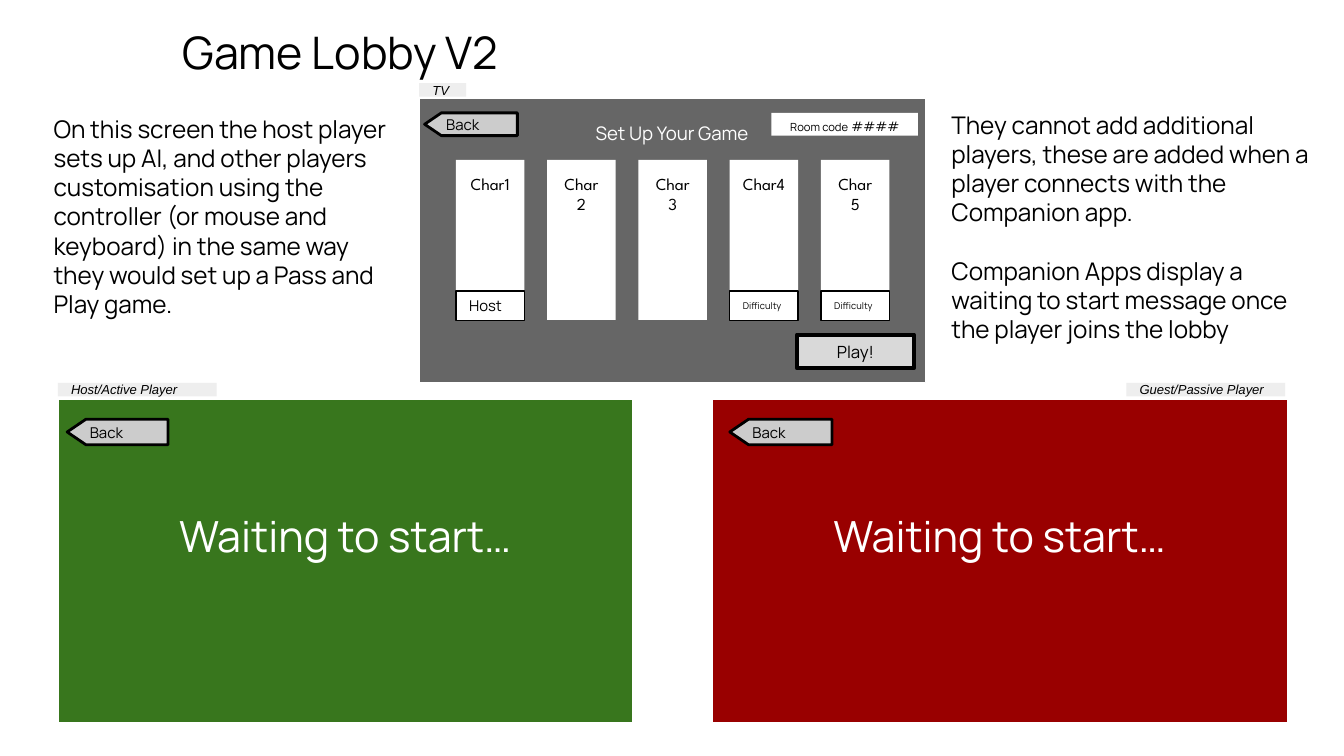
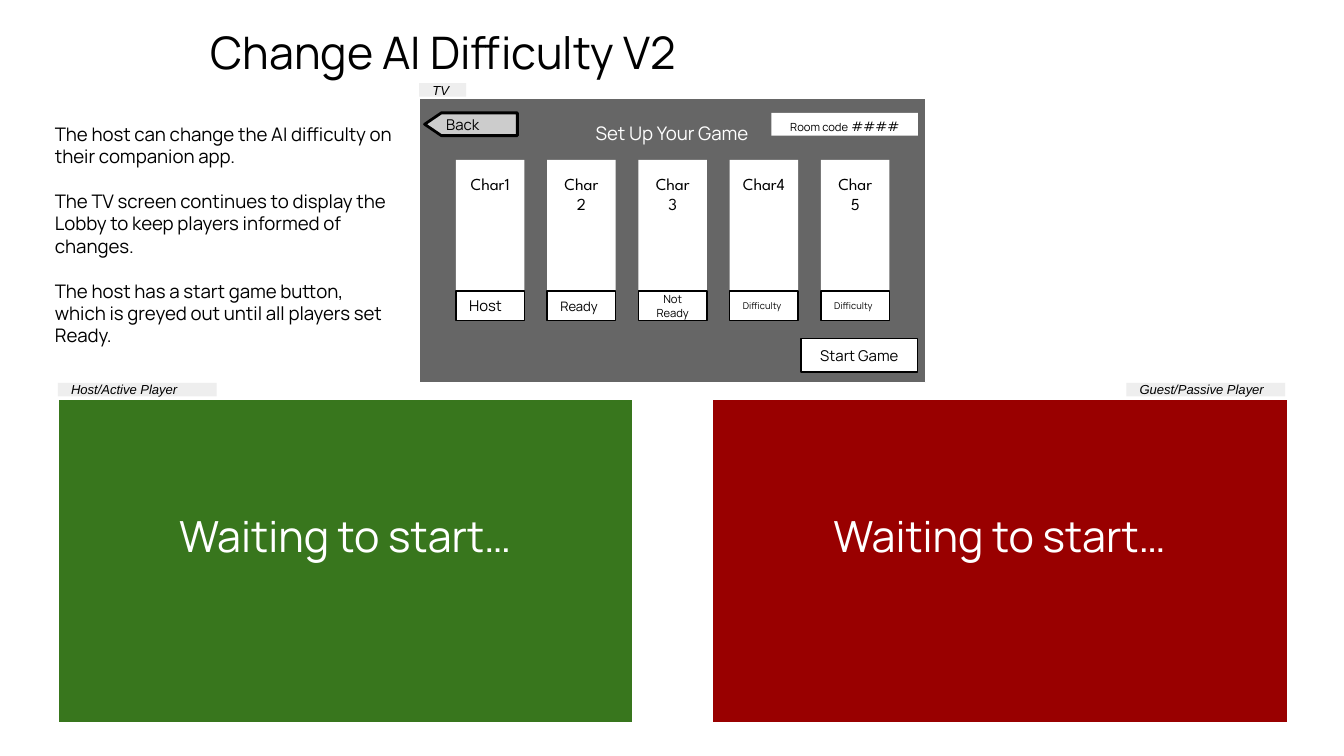
from pptx import Presentation
from pptx.dml.color import RGBColor
from pptx.enum.shapes import MSO_SHAPE as Preset
from pptx.enum.text import MSO_ANCHOR as Anchor, PP_ALIGN as Align
from pptx.util import Pt

BLACK, WHITE, GREEN, RED = "000000", "FFFFFF", "38761D", "990000"
SCREEN, TAG, ARROW, BUTTON = "666666", "EEEEEE", "CCCCCC", "D9D9D9"
FONT = "Manrope"


def color(hex_string):
    return RGBColor.from_string(hex_string)


def draw(page, at, fill=None, line=None, weight=0.75, text=(), size=8, font=FONT,
         ink=BLACK, italic=False, center=False, middle=True, preset=Preset.RECTANGLE):
    """Add a filled shape, or a plain text box when there is no fill."""
    place = [Pt(value) for value in at]
    if fill:
        shape = page.shapes.add_shape(preset, *place)
        shape.shadow.inherit = False
        shape.fill.solid()
        shape.fill.fore_color.rgb = color(fill)
        if line:
            shape.line.color.rgb = color(line)
            shape.line.width = Pt(weight)
        else:
            shape.line.fill.background()
    else:
        shape = page.shapes.add_textbox(*place)

    frame = shape.text_frame
    frame.word_wrap = True
    frame.margin_left = frame.margin_right = Pt(7.2)
    frame.margin_top = frame.margin_bottom = Pt(7.2)
    frame.vertical_anchor = Anchor.MIDDLE if middle else Anchor.TOP
    for index, words in enumerate(text):
        para = frame.paragraphs[0] if index == 0 else frame.add_paragraph()
        if index:
            para.space_before = Pt(size * 1.2)
        para.text = words
        para.alignment = Align.CENTER if center else Align.LEFT
        para.font.name = font
        para.font.size = Pt(size)
        para.font.italic = italic
        para.font.color.rgb = color(ink)
    return shape


# What differs between the two pages; badges are (character, words, size, centred)
HOST = (0, "Host", 8, False)
DIFFICULTY = [(3, "Difficulty", 5, False), (4, "Difficulty", 5, False)]
PAGES = [
    dict(
        title="Game Lobby V2", title_left=90.7,
        notes=[
            dict(at=(21.6, 54, 195.8, 152), size=13, middle=False, text=[
                "On this screen the host player sets up AI, and other players "
                "customisation using the controller (or mouse and keyboard) in the "
                "same way they would set up a Pass and Play game."]),
            dict(at=(502.6, 51.8, 212.4, 156.2), size=13, middle=False, text=[
                "They cannot add additional players, these are added when a player "
                "connects with the Companion app.",
                "Companion Apps display a waiting to start message once the player "
                "joins the lobby"]),
        ],
        badges=[HOST, *DIFFICULTY],
        backs=[(227.5, 60.5, 49.7, 12.2), (36, 224.6, 54, 13.7),
               (391, 224.6, 54.7, 13.7)],
        button=dict(at=(427, 179.3, 62.6, 18), fill=BUTTON, weight=2.25,
                    text=["Play!"], size=9),
    ),
    dict(
        title="Change AI Difficulty V2", title_left=105.8,
        notes=[
            dict(at=(22.3, 49.7, 195.8, 152), size=10, text=[
                "The host can change the AI difficulty on their companion app.",
                "The TV screen continues to display the Lobby to keep players "
                "informed of changes.",
                "The host has a start game button, which is greyed out until all "
                "players set Ready."]),
        ],
        badges=[HOST, (1, "Ready", 7, False), (2, "Not Ready", 6, True), *DIFFICULTY],
        backs=[(227.5, 60.5, 49.7, 12.2)],
        button=dict(at=(429.1, 181.4, 62.6, 18), fill=WHITE, text=["Start Game"]),
    ),
]
PHONES = [(31, GREEN), (381.6, RED)]
TAGS = [(31, 205.2, 85, "Host/Active Player"), (603.4, 205.2, 85, "Guest/Passive Player"),
        (224.6, 44.6, 25.2, "TV")]
CHAR_LEFT, CHAR_STEP, CHAR_WIDTH = 244.2, 48.9, 36.7

deck = Presentation()
deck.slide_width, deck.slide_height = Pt(720), Pt(405)

for content in PAGES:
    page = deck.slides.add_slide(deck.slide_layouts[6])

    # Phone and TV screens with their tags
    for left, fill in PHONES:
        draw(page, (left, 213.8, 308.2, 173.5), fill, WHITE)
    draw(page, (224.6, 52.4, 271.4, 152.6), SCREEN, WHITE)
    for left, top, width, words in TAGS:
        draw(page, (left, top, width, 7.2), TAG, text=[words], size=7,
             font="Arial", italic=True)

    # Title and explanations
    draw(page, (content["title_left"], 5, 760 - content["title_left"], 45.4),
         text=[content["title"]], size=24)
    for note in content["notes"]:
        draw(page, **note)

    # Character cards and their badges
    for index in range(5):
        draw(page, (CHAR_LEFT + index * CHAR_STEP, 85.7, CHAR_WIDTH, 85.7), WHITE,
             text=[f"Char{index + 1}"], size=9, font="League Spartan",
             center=True, middle=False)
    for index, words, size, center in content["badges"]:
        draw(page, (CHAR_LEFT + index * CHAR_STEP, 156, CHAR_WIDTH, 15.8), WHITE, BLACK,
             text=[words], size=size, center=center)

    # TV heading, room code and button
    draw(page, (295.2, 60.5, 129.6, 10.8), text=["Set Up Your Game"], size=10,
         ink=WHITE, center=True, middle=False)
    room = draw(page, (413.3, 60.5, 78.5, 12.2), WHITE, text=["Room code"], size=6,
                center=True)
    for words, size in [(" ", 9), ("####", 7)]:
        span = room.text_frame.paragraphs[0].add_run()
        span.text = words
        span.font.size = Pt(size)
    draw(page, line=BLACK, center=True, **content["button"])

    # Back arrows pointing left
    for at in content["backs"]:
        back = draw(page, at, ARROW, BLACK, 1.5, text=["Back"], preset=Preset.PENTAGON)
        back.adjustments[0] = 0.734
        back._element.spPr.xfrm.set("flipH", "1")

    # Waiting messages
    for left, fill in PHONES:
        draw(page, (left, 265.7, 308.2, 75.6), text=["Waiting to start…"], size=23,
             ink=WHITE, center=True, middle=False)

deck.save("out.pptx")
